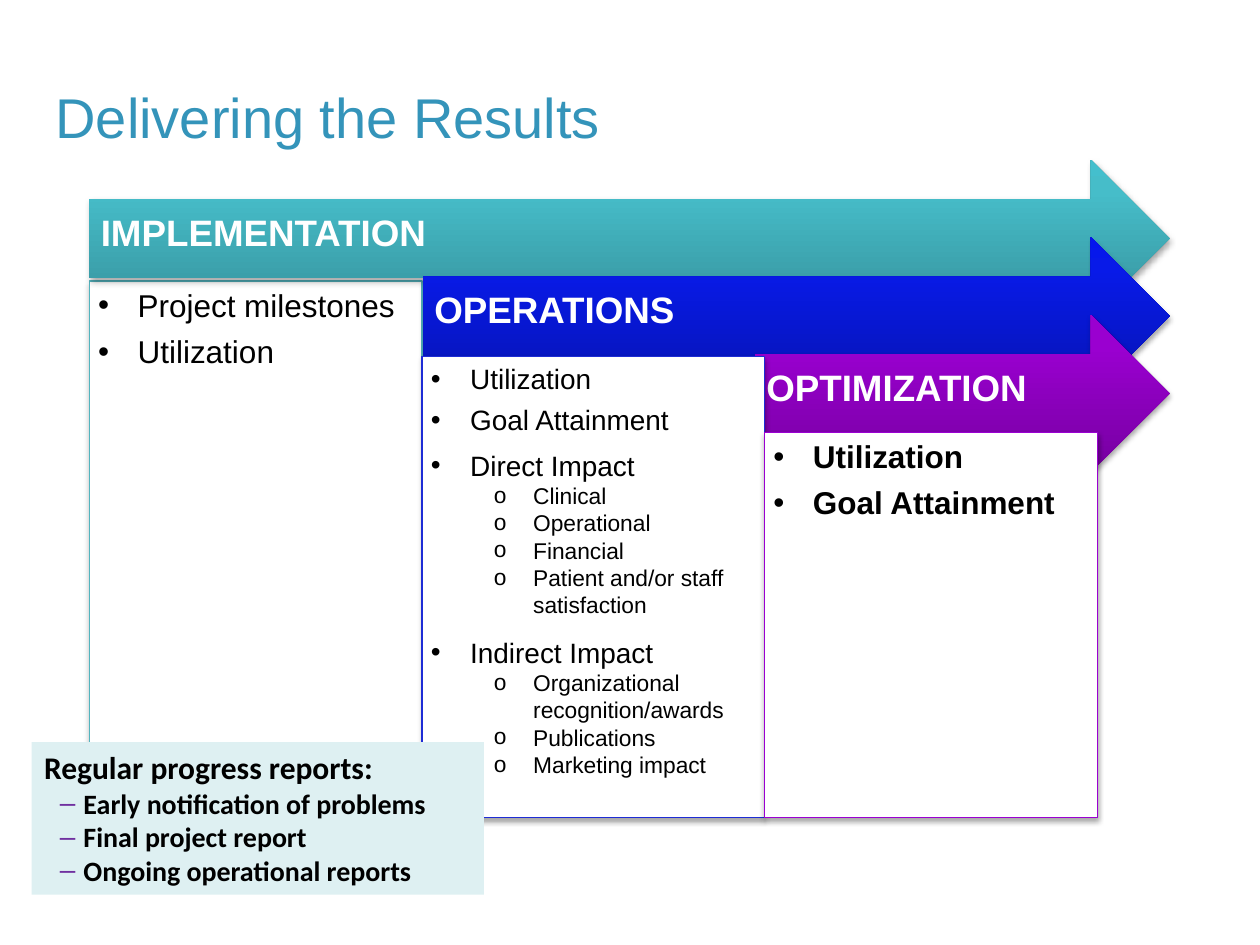
from copy import deepcopy
from dataclasses import dataclass

from lxml import etree
from pptx import Presentation
from pptx.dml.color import RGBColor
from pptx.enum.shapes import MSO_SHAPE
from pptx.enum.text import MSO_ANCHOR, MSO_AUTO_SIZE, PP_ALIGN
from pptx.oxml.ns import qn
from pptx.util import Pt

ARROW = MSO_SHAPE.RIGHT_ARROW
TOP, MIDDLE = MSO_ANCHOR.TOP, MSO_ANCHOR.MIDDLE
LEFT = PP_ALIGN.LEFT
FIXED = MSO_AUTO_SIZE.NONE


@dataclass(frozen=True)
class Theme:
    title: str = "3494BA"
    ink: str = "000000"
    paper: str = "FFFFFF"
    panel: str = "DEF0F2"
    dash: str = "7030A0"
    sans: str = "Arial"
    note: str = "Calibri"
    head: float = 32
    label: float = 21
    large: float = 18
    mid: float = 16
    small: float = 13


@dataclass(frozen=True)
class Mark:
    char: str
    left: float
    hang: float
    color: str


@dataclass(frozen=True)
class Line:
    text: str
    size: float
    mark: Mark | None = None
    level: int = 0
    lead: float = 1
    after: float = 0


@dataclass(frozen=True)
class Phase:
    name: str
    start: float
    shades: tuple[str, str, str]


@dataclass(frozen=True)
class Panel:
    left: float
    top: float
    width: float
    height: float
    lines: list[Line]
    fill: str
    edge: str | None = None
    font: str = "Arial"
    bold: bool = False
    inset: tuple[float, float, float, float] = (5, 5, 5, 5)


T = Theme()
DOT = Mark("•", 22.5, 22.5, T.ink)
RING = Mark("o", 58.5, 22.5, T.ink)
DASH = Mark("–", 22.5, 13.5, T.dash)

FLOOR = 467.3
TIP = 668.4
RISE, STEP, TALL = 91.3, 44.3, 90
STOPS = (0, 0.8, 1)


def point(text: str, size: float) -> Line:
    return Line(text, size, DOT, lead=0.9, after=0.4 * size)


def detail(text: str) -> Line:
    return Line(text, T.small, RING, 1)


PHASES = [
    Phase("IMPLEMENTATION", 51.1, ("36919B", "46BDC9", "44BFCD")),
    Phase("OPERATIONS", 241.7, ("0614B3", "081AE8", "0416EE")),
    Phase("OPTIMIZATION", 431.4, ("7600A0", "9A00D0", "9A00D1")),
]

PANELS = [
    Panel(51.1, 160.6, 190, FLOOR - 160.6,
          [point("Project milestones", T.large), point("Utilization", T.large)],
          T.paper, "54B4BE"),
    Panel(241.2, 203.8, 195.8, FLOOR - 203.8,
          [point("Utilization", T.mid), point("Goal Attainment", T.mid),
           Line("Direct Impact", T.mid, DOT),
           detail("Clinical"), detail("Operational"), detail("Financial"),
           detail("Patient and/or staff satisfaction"),
           Line("Indirect Impact", T.mid, DOT, lead=1.5),
           detail("Organizational recognition/awards"),
           detail("Publications"), detail("Marketing impact")],
          T.paper, "1E2CD5"),
    Panel(437, 247, 190, FLOOR - 247,
          [point("Utilization", T.large), point("Goal Attainment", T.large)],
          T.paper, "9B00D2", bold=True),
    Panel(18, 424, 258.5, 87.3,
          [Line("Regular progress reports:", T.large),
           Line("Early notification of problems", T.mid, DASH),
           Line("Final project report", T.mid, DASH),
           Line("Ongoing operational reports", T.mid, DASH)],
          T.panel, font=T.note, bold=True, inset=(7.2, 3.6, 7.2, 3.6)),
]


def rgb(code: str) -> RGBColor:
    return RGBColor.from_string(code)


def place(shape, left: float, top: float, width: float, height: float) -> None:
    shape.left, shape.top = Pt(left), Pt(top)
    shape.width, shape.height = Pt(width), Pt(height)


def setup(frame, inset: tuple, anchor) -> None:
    frame.word_wrap = True
    frame.auto_size = FIXED
    frame.vertical_anchor = anchor
    (frame.margin_left, frame.margin_top,
     frame.margin_right, frame.margin_bottom) = map(Pt, inset)


def shade(shape) -> None:
    """Cast a soft shadow straight down."""
    shape.shadow.inherit = False
    glow = shape._element.spPr.find(qn("a:effectLst"))
    cast = etree.SubElement(glow, qn("a:outerShdw"), blurRad=str(Pt(3.1)),
                            dist=str(Pt(1.8)), dir="5400000", rotWithShape="0")
    tint = etree.SubElement(cast, qn("a:srgbClr"), val=T.ink)
    etree.SubElement(tint, qn("a:alpha"), val="35000")


def bullet(para, mark: Mark | None) -> None:
    props = para._p.get_or_add_pPr()
    props.set("marL", str(Pt(mark.left) if mark else 0))
    props.set("indent", str(Pt(-mark.hang) if mark else 0))
    if mark is None:
        etree.SubElement(props, qn("a:buNone"))
        return
    tint = etree.SubElement(props, qn("a:buClr"))
    etree.SubElement(tint, qn("a:srgbClr"), val=mark.color)
    etree.SubElement(props, qn("a:buFont"), typeface=T.sans)
    etree.SubElement(props, qn("a:buChar"), char=mark.char)


def write(para, text: str, size: float, color: str,
          face: str = T.sans, bold: bool = False) -> None:
    para.alignment = LEFT
    run = para.add_run()
    run.text = text
    font = run.font
    font.name, font.size, font.bold = face, Pt(size), bold
    font.color.rgb = rgb(color)


def draw_arrow(slide, phase: Phase, row: int) -> None:
    shape = slide.shapes.add_shape(
        ARROW, Pt(phase.start), Pt(RISE + row * STEP),
        Pt(TIP - phase.start), Pt(TALL))
    shape.line.fill.background()
    fill = shape.fill
    fill.gradient()
    fill.gradient_angle = 90
    stops = shape._element.spPr.find(".//" + qn("a:gsLst"))
    stops.append(deepcopy(stops[0]))
    for stop, spot, color in zip(fill.gradient_stops, STOPS, phase.shades):
        stop.position = spot
        stop.color.rgb = rgb(color)
    shade(shape)
    setup(shape.text_frame, (6.5, 6.5, 20, 14.4), MIDDLE)
    write(shape.text_frame.paragraphs[0], phase.name, T.label, T.paper, bold=True)


def draw_panel(shape, panel: Panel) -> None:
    place(shape, panel.left, panel.top, panel.width, panel.height)
    shape.fill.solid()
    shape.fill.fore_color.rgb = rgb(panel.fill)
    if panel.edge:
        shape.line.color.rgb = rgb(panel.edge)
        shape.line.width = Pt(0.75)
        shade(shape)
    frame = shape.text_frame
    setup(frame, panel.inset, TOP)
    for i, line in enumerate(panel.lines):
        para = frame.add_paragraph() if i else frame.paragraphs[0]
        para.level = line.level
        bullet(para, line.mark)
        para.line_spacing = line.lead
        para.space_before, para.space_after = Pt(0), Pt(line.after)
        write(para, line.text, line.size, T.ink, panel.font, panel.bold)


def main() -> None:
    deck = Presentation()
    deck.slide_width, deck.slide_height = Pt(720), Pt(540)
    slide = deck.slides.add_slide(deck.slide_layouts.get_by_name("Comparison"))
    title, *bodies = [p for p in slide.placeholders]
    place(title, 31.7, 21.6, 664.6, 90)
    setup(title.text_frame, (0, 0, 0, 0), MIDDLE)
    write(title.text_frame.paragraphs[0], "Delivering the Results", T.head, T.title)
    for row, phase in enumerate(PHASES):
        draw_arrow(slide, phase, row)
    for shape, panel in zip(bodies, PANELS):
        draw_panel(shape, panel)
    for shape in bodies[1:]:  # later panels lie over the arrows
        slide.shapes._spTree.append(shape._element)
    deck.save("out.pptx")


if __name__ == "__main__":
    main()
